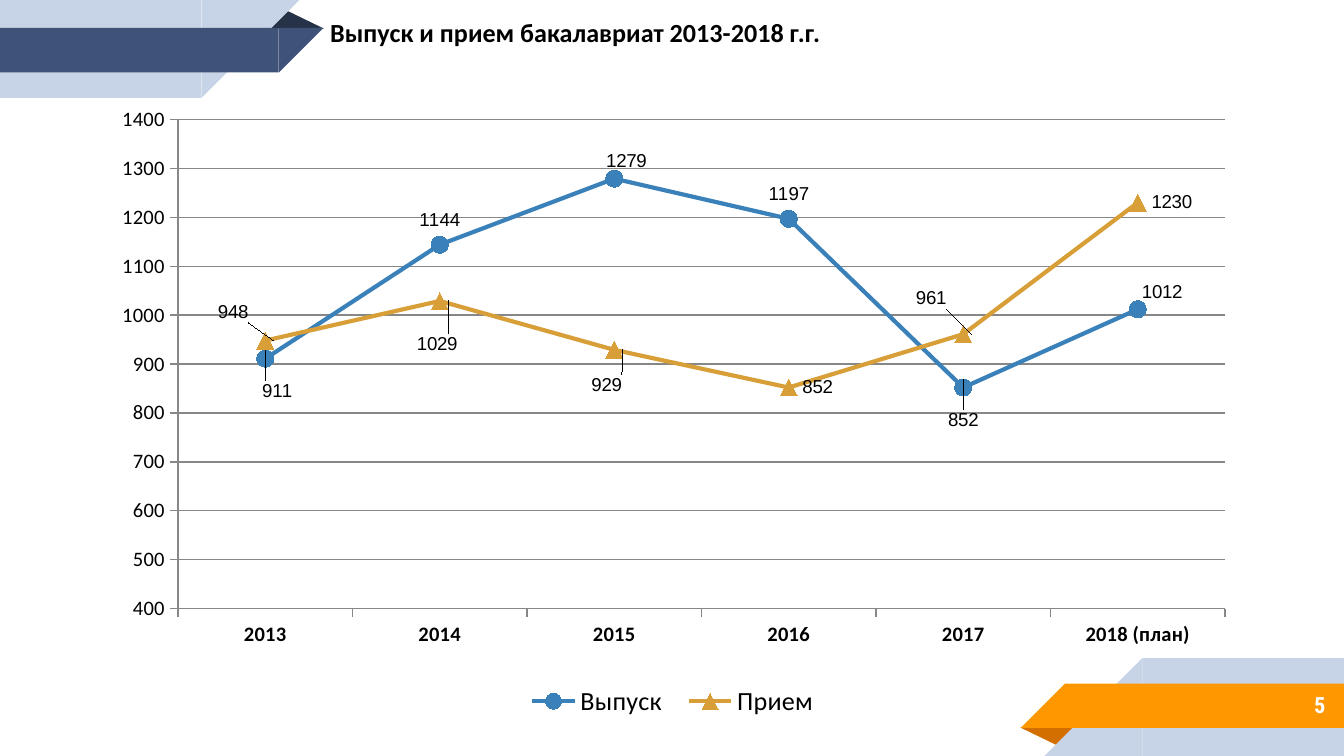
"""Build a slide with a line chart of bachelor graduates and admissions."""
from lxml.etree import SubElement
from pptx import Presentation
from pptx.chart.data import CategoryChartData
from pptx.dml.color import RGBColor
from pptx.enum.chart import XL_CHART_TYPE, XL_LEGEND_POSITION, XL_TICK_MARK
from pptx.enum.chart import XL_LABEL_POSITION as LabelPosition, XL_MARKER_STYLE as Marker
from pptx.enum.shapes import MSO_SHAPE as Shape
from pptx.enum.text import MSO_ANCHOR, MSO_AUTO_SIZE, PP_ALIGN
from pptx.oxml import parse_xml
from pptx.oxml.ns import nsdecls, qn
from pptx.util import Cm, Pt

BLACK = RGBColor(0x00, 0x00, 0x00)
WHITE = RGBColor(0xFF, 0xFF, 0xFF)
GRAY = RGBColor(0x87, 0x87, 0x87)
PALE = RGBColor(0xC7, 0xD3, 0xE6)
NAVY = RGBColor(0x3F, 0x53, 0x78)
DARK_NAVY = RGBColor(0x26, 0x32, 0x48)
ORANGE = RGBColor(0xFF, 0x98, 0x00)
DARK_ORANGE = RGBColor(0xD2, 0x6F, 0x00)
BLUE = RGBColor(0x3A, 0x81, 0xBA)
GOLD = RGBColor(0xD8, 0x9F, 0x39)
SLIDE_WIDTH, SLIDE_HEIGHT = 25.4, 14.29


def manual_layout(**settings):
    layout = parse_xml(f"<c:layout {nsdecls('c')}><c:manualLayout/></c:layout>")
    for name, value in settings.items():
        SubElement(layout[0], qn(f"c:{name}")).set("val", str(value))
    return layout


def format_text_frame(frame, text, font_name, size, color, alignment):
    frame.text = text
    frame.word_wrap = True
    frame.auto_size = MSO_AUTO_SIZE.NONE
    frame.vertical_anchor = MSO_ANCHOR.MIDDLE
    frame.margin_left = frame.margin_right = Cm(0.25)
    frame.margin_top = frame.margin_bottom = Cm(0.25)
    paragraph = frame.paragraphs[0]
    paragraph.alignment = alignment
    paragraph.font.name = font_name
    paragraph.font.size = Pt(size)
    paragraph.font.bold = True
    paragraph.font.color.rgb = color


presentation = Presentation()
presentation.slide_width = Cm(SLIDE_WIDTH)
presentation.slide_height = Cm(SLIDE_HEIGHT)
slide = presentation.slides.add_slide(presentation.slide_layouts[5])

for half_turn, fold_color, band_color in ((True, DARK_ORANGE, ORANGE), (False, DARK_NAVY, NAVY)):
    for kind, left, top, width, height, rotation, color in (
        (Shape.ISOSCELES_TRIANGLE, 5.03, 0.18, 1.09, 0.36, 0, fold_color),
        (Shape.RECTANGLE, 0, 0, 3.81, 1.85, 0, PALE),
        (Shape.RIGHT_TRIANGLE, 3.81, 0, 1.85, 1.85, 90, PALE),
        (Shape.RECTANGLE, 0, 0.53, 5.27, 0.84, 0, band_color),
        (Shape.RIGHT_TRIANGLE, 5.27, 0.53, 0.84, 0.84, 90, band_color),
    ):
        if half_turn:
            left = SLIDE_WIDTH - left - width
            top = SLIDE_HEIGHT - top - height
            rotation += 180
        shape = slide.shapes.add_shape(kind, Cm(left), Cm(top), Cm(width), Cm(height))
        shape.rotation = rotation
        shape.shadow.inherit = False
        shape.fill.solid()
        shape.fill.fore_color.rgb = color
        shape.line.fill.background()
        if kind == Shape.ISOSCELES_TRIANGLE:
            shape.adjustments[0] = 0.32

page_number = slide.shapes.add_textbox(Cm(21.16), Cm(12.88), Cm(4.14), Cm(0.89))
format_text_frame(page_number.text_frame, "5", "Roboto Condensed", 12, WHITE, PP_ALIGN.RIGHT)

title = slide.shapes.title
title.left, title.top, title.width, title.height = Cm(5.99), Cm(-0.15), Cm(14.61), Cm(1.52)
format_text_frame(title.text_frame, "Выпуск и прием бакалавриат 2013-2018 г.г.",
                  "Calibri", 14, BLACK, PP_ALIGN.LEFT)

chart_data = CategoryChartData()
chart_data.categories = ["2013", "2014", "2015", "2016", "2017", "2018 (план)"]
chart_data.add_series("Выпуск", (911, 1144, 1279, 1197, 852, 1012))
chart_data.add_series("Прием", (948, 1029, 929, 852, 961, 1230))
chart = slide.shapes.add_chart(XL_CHART_TYPE.LINE_MARKERS, Cm(0.71), Cm(1.75),
                               Cm(23.09), Cm(13.46), chart_data).chart
chart.has_title = False
chart.font.name = "Arial"
chart.font.size = Pt(10)
chart.font.color.rgb = BLACK

plot_area = chart.element.xpath("c:chart/c:plotArea")[0]
for old_layout in plot_area.xpath("c:layout"):
    plot_area.remove(old_layout)
plot_area.insert(0, manual_layout(layoutTarget="inner", xMode="edge", yMode="edge",
                                  x=0.115, y=0.038, w=0.857, h=0.687))

for axis, bold in ((chart.category_axis, True), (chart.value_axis, False)):
    axis.major_tick_mark = XL_TICK_MARK.OUTSIDE
    axis.minor_tick_mark = XL_TICK_MARK.NONE
    axis.format.line.color.rgb = GRAY
    axis.tick_labels.font.name = "Calibri"
    axis.tick_labels.font.size = Pt(11)
    axis.tick_labels.font.bold = bold
chart.value_axis.minimum_scale = 400
chart.value_axis.maximum_scale = 1400
chart.value_axis.major_unit = 100
chart.value_axis.has_major_gridlines = True
chart.value_axis.major_gridlines.format.line.color.rgb = GRAY

chart.has_legend = True
chart.legend.position = XL_LEGEND_POSITION.BOTTOM
chart.legend.include_in_layout = False
chart.legend.font.name = "Calibri"
chart.legend.font.size = Pt(14)
legend_position = chart.element.xpath("c:chart/c:legend/c:legendPos")[0]
for old_layout in chart.element.xpath("c:chart/c:legend/c:layout"):
    old_layout.getparent().remove(old_layout)
legend_position.addnext(manual_layout(xMode="edge", yMode="edge", x=0.39, y=0.83, w=0.26, h=0.05))

series_styles = (
    (BLUE, Marker.CIRCLE, LabelPosition.ABOVE,
     {0: (0.01, 0.08), 2: (0.01, 0.01), 4: (0, 0.08), 5: (0.02, 0.01)}),
    (GOLD, Marker.TRIANGLE, LabelPosition.RIGHT,
     {0: (-0.05, -0.04), 1: (-0.03, 0.06), 2: (-0.03, 0.05), 4: (-0.05, -0.05)}),
)
for series, (color, marker, label_position, label_shifts) in zip(chart.plots[0].series, series_styles):
    series.smooth = False
    series.format.line.color.rgb = color
    series.format.line.width = Pt(2.25)
    series.marker.style = marker
    series.marker.size = 9
    series.marker.format.fill.solid()
    series.marker.format.fill.fore_color.rgb = color
    series.marker.format.line.color.rgb = color
    series.data_labels.show_value = True
    series.data_labels.position = label_position
    for index in label_shifts:
        series.points[index].data_label.position = label_position

for series_element, style in zip(plot_area.xpath(".//c:ser"), series_styles):
    for index, (x, y) in style[3].items():
        label_index = series_element.xpath(f"c:dLbls/c:dLbl/c:idx[@val='{index}']")[0]
        label_index.addnext(manual_layout(x=x, y=y))

presentation.save("out.pptx")
